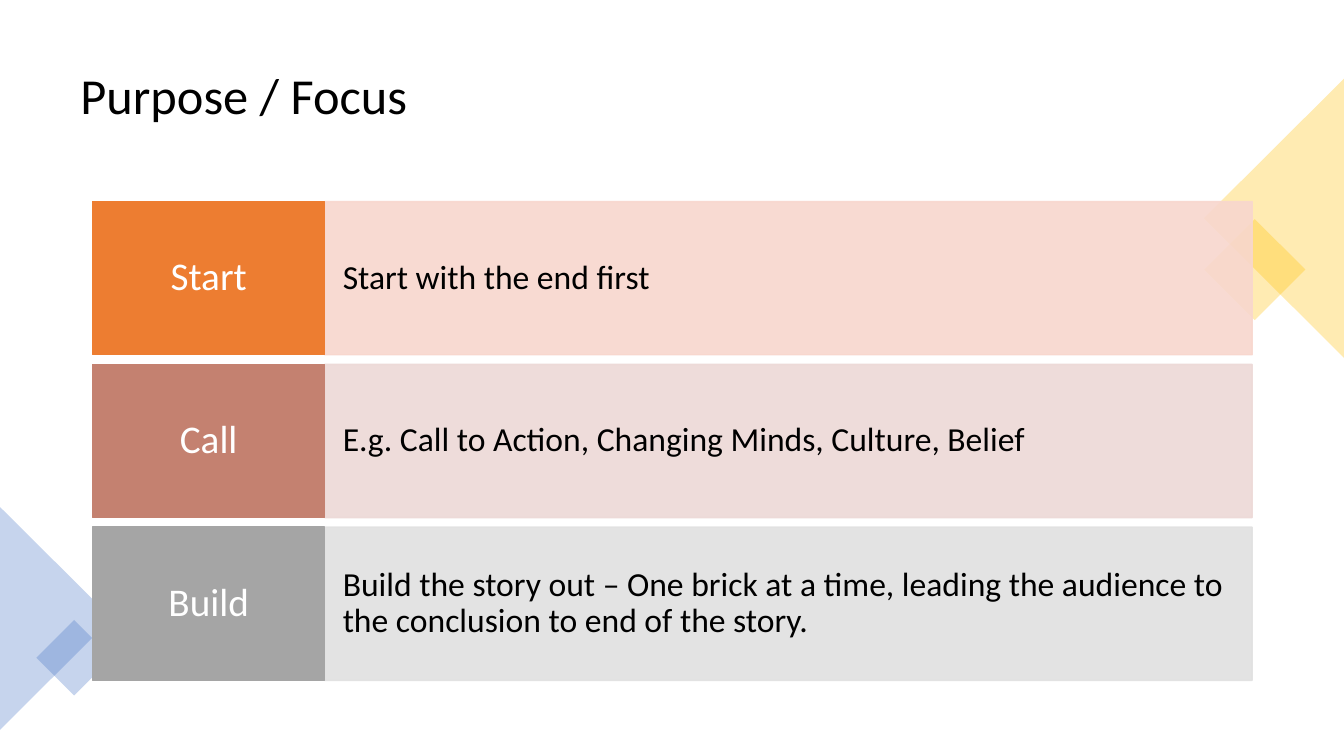
from lxml import etree
from pptx import Presentation
from pptx.dml.color import RGBColor
from pptx.enum.shapes import MSO_SHAPE
from pptx.enum.text import MSO_ANCHOR, PP_ALIGN
from pptx.oxml.ns import qn
from pptx.util import Inches, Pt

RECTANGLE = MSO_SHAPE.RECTANGLE
TRIANGLE = MSO_SHAPE.ISOSCELES_TRIANGLE
MIDDLE = MSO_ANCHOR.MIDDLE
LEFT, CENTER = PP_ALIGN.LEFT, PP_ALIGN.CENTER

COLORS = {
    "black": "000000", "white": "FFFFFF", "gold": "FFC000", "blue": "4472C4",
    "orange": "ED7D31", "peach": "F8D7CE", "clay": "C48170", "rose": "EDD9D7",
    "gray": "A5A5A5", "silver": "E1E1E1",
}
TITLE = "Purpose / Focus"
STEPS = [
    ("Start", "Start with the end first", "orange", "peach"),
    ("Call", "E.g. Call to Action, Changing Minds, Culture, Belief", "clay", "rose"),
    ("Build", "Build the story out – One brick at a time, leading the audience to "
              "the conclusion to end of the story.", "gray", "silver"),
]
DECORATIONS = [
    (RECTANGLE, (12.09, 2.32, 0.71, 0.71), 45, "gold"),
    (TRIANGLE, (11.25, 1.47, 2.77, 1.39), 270, "gold"),
    (TRIANGLE, (-0.55, 5.58, 2.21, 1.11), 90, "blue"),
    (RECTANGLE, (0.47, 6.26, 0.53, 0.53), 45, "blue"),
]
TITLE_FORMAT = {"size": 36, "color": "black", "align": LEFT, "margins": (0.1, 0.05)}
LABEL_FORMAT = {"size": 28, "color": "white", "align": CENTER, "margins": (0.12, 0.15)}
DETAIL_FORMAT = {"size": 24, "color": "black", "align": LEFT, "margins": (0.18, 0.39)}

ROWS_LEFT, ROWS_TOP, ROW_HEIGHT, ROW_PITCH = 0.92, 2, 1.52, 1.615
LABEL_WIDTH, DETAIL_WIDTH = 2.3, 9.2


def color(name):
    return RGBColor.from_string(COLORS[name])


def write_text(shape, text, style):
    frame = shape.text_frame
    horizontal, vertical = map(Inches, style["margins"])
    frame_values = {
        "word_wrap": True, "vertical_anchor": MIDDLE,
        "margin_left": horizontal, "margin_right": horizontal,
        "margin_top": vertical, "margin_bottom": vertical,
    }
    for name, value in frame_values.items():
        setattr(frame, name, value)
    paragraph = frame.paragraphs[0]
    paragraph.alignment = style["align"]
    paragraph.line_spacing = 0.9
    run = paragraph.add_run()
    run.text = text
    for name, value in {"name": "Calibri", "size": Pt(style["size"])}.items():
        setattr(run.font, name, value)
    run.font.color.rgb = color(style["color"])


def add_filled_shape(slide, kind, box, fill, opacity=100, outlined=False):
    shape = slide.shapes.add_shape(kind, *map(Inches, box))
    shape.shadow.inherit = False
    shape.fill.solid()
    shape.fill.fore_color.rgb = color(fill)
    if outlined:
        shape.line.color.rgb = color(fill)
        shape.line.width = Pt(1)
    else:
        shape.line.fill.background()
    if opacity < 100:
        for element in shape.element.spPr.iter(qn("a:srgbClr")):
            etree.SubElement(element, qn("a:alpha"), val=str(opacity * 1000))
    return shape


def main():
    presentation = Presentation()
    presentation.slide_width = Inches(13.33)
    presentation.slide_height = Inches(7.5)
    slide = presentation.slides.add_slide(presentation.slide_layouts[6])

    title = slide.shapes.add_textbox(*map(Inches, (0.7, 0.35, 11.93, 1.24)))
    write_text(title, TITLE, TITLE_FORMAT)

    for kind, box, rotation, fill in DECORATIONS:
        add_filled_shape(slide, kind, box, fill, opacity=30).rotation = rotation

    for index, (label, detail, label_fill, detail_fill) in enumerate(STEPS):
        top = ROWS_TOP + index * ROW_PITCH
        detail_box = (ROWS_LEFT + LABEL_WIDTH, top, DETAIL_WIDTH, ROW_HEIGHT)
        label_box = (ROWS_LEFT, top, LABEL_WIDTH, ROW_HEIGHT)
        detail_shape = add_filled_shape(slide, RECTANGLE, detail_box, detail_fill, 90, True)
        write_text(detail_shape, detail, DETAIL_FORMAT)
        label_shape = add_filled_shape(slide, RECTANGLE, label_box, label_fill, outlined=True)
        write_text(label_shape, label, LABEL_FORMAT)

    presentation.save("out.pptx")


if __name__ == "__main__":
    main()
